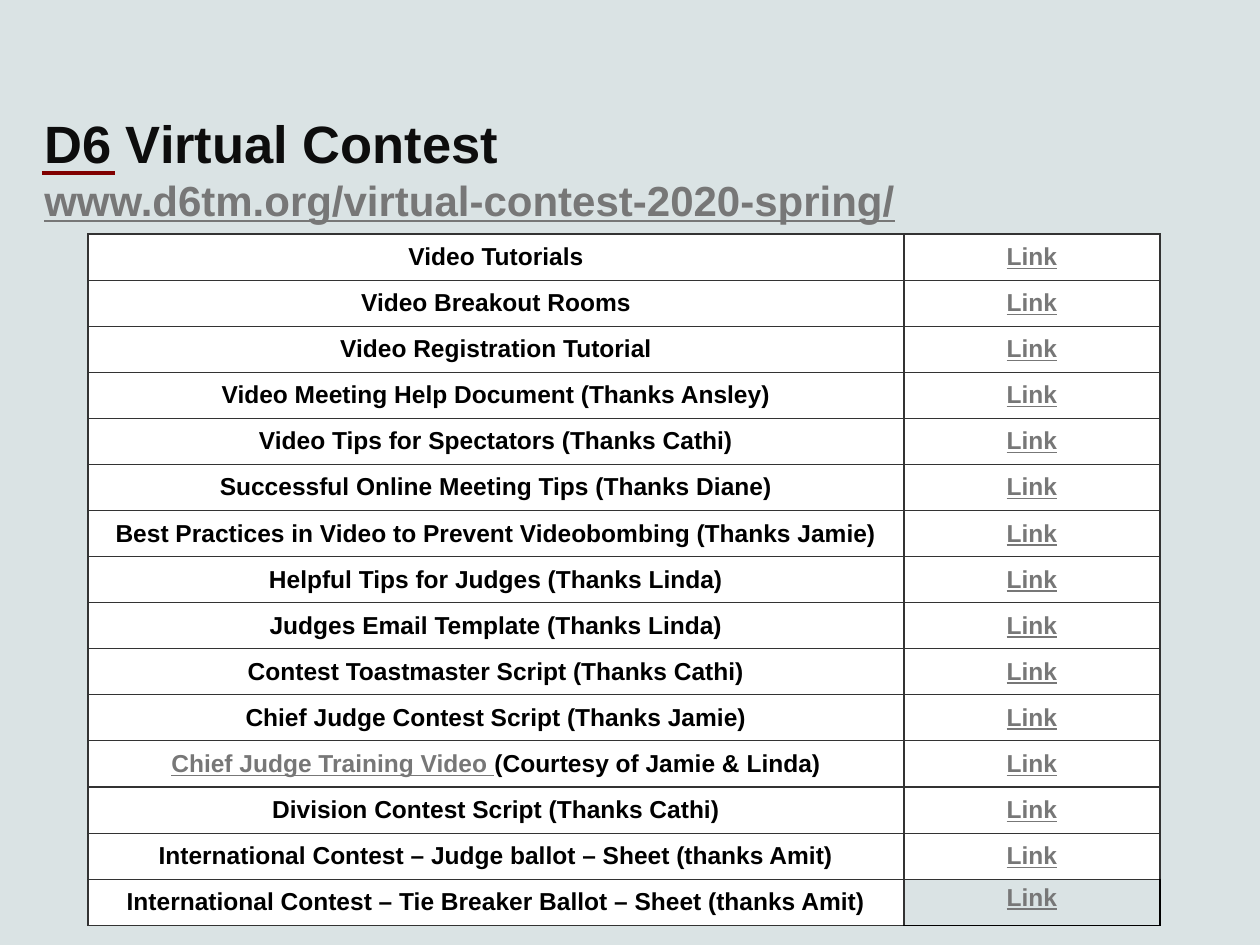
from lxml.etree import SubElement
from pptx import Presentation
from pptx.dml.color import RGBColor
from pptx.enum.shapes import MSO_CONNECTOR
from pptx.enum.text import MSO_ANCHOR as Anchor, PP_ALIGN as Align
from pptx.oxml.ns import qn
from pptx.util import Pt

SCALE = 914400 / 126
BLACK, GREY, WHITE, RULE = "000000", "777777", "FFFFFF", "333333"


def px(count):
    return round(count * SCALE)


def add_span(para, text, size, color, underline=False):
    span = para.add_run()
    span.text = text
    span.font.name = "Arial"
    span.font.size = Pt(size)
    span.font.bold = True
    span.font.underline = underline
    span.font.color.rgb = RGBColor.from_string(color)


deck = Presentation()
deck.slide_width, deck.slide_height = px(1260), px(945)
page = deck.slides.add_slide(deck.slide_layouts[6])
page.background.fill.solid()
page.background.fill.fore_color.rgb = RGBColor.from_string("DAE3E4")

accent = page.shapes.add_connector(
    MSO_CONNECTOR.STRAIGHT, px(42), px(173), px(115), px(173))
accent.line.color.rgb = RGBColor.from_string("800000")
accent.line.width = Pt(2.25)
SubElement(accent._element.spPr, qn("a:effectLst"))

title = page.shapes.add_textbox(px(32), px(105), px(1187), px(120))
title.text_frame.word_wrap = True
heading = title.text_frame.paragraphs[0]
add_span(heading, "D6 Virtual Contest", 30, "0D0D0D")
heading.add_line_break()
add_span(heading, "www.d6tm.org/virtual-contest-2020-spring/", 24, GREY, True)

resources = [
    "Video Tutorials",
    "Video Breakout Rooms",
    "Video Registration Tutorial",
    "Video Meeting Help Document (Thanks Ansley)",
    "Video Tips for Spectators (Thanks Cathi)",
    "Successful Online Meeting Tips (Thanks Diane)",
    "Best Practices in Video to Prevent Videobombing (Thanks Jamie)",
    "Helpful Tips for Judges (Thanks Linda)",
    "Judges Email Template (Thanks Linda)",
    "Contest Toastmaster Script (Thanks Cathi)",
    "Chief Judge Contest Script (Thanks Jamie)",
    "(Courtesy of Jamie & Linda)",
    "Division Contest Script (Thanks Cathi)",
    "International Contest – Judge ballot – Sheet (thanks Amit)",
    "International Contest – Tie Breaker Ballot – Sheet (thanks Amit)",
]
linked_prefixes = {11: "Chief Judge Training Video "}
last = len(resources) - 1

table = page.shapes.add_table(
    len(resources), 2, px(88), px(234), px(1072), px(692)).table
table.first_row = table.horz_banding = False
table.columns[0].width, table.columns[1].width = px(816), px(256)

for row, resource in enumerate(resources):
    for column in range(2):
        cell = table.cell(row, column)
        is_open = row == last and column == 1
        cell.margin_left = cell.margin_right = px(6)
        cell.margin_top = cell.margin_bottom = px(5 if is_open else 6)
        cell.vertical_anchor = Anchor.TOP if is_open else Anchor.MIDDLE
        properties = cell._tc.get_or_add_tcPr()
        for side in ("lnL", "lnR", "lnT", "lnB"):
            heavy = is_open and side in ("lnR", "lnB")
            border = SubElement(properties, qn(f"a:{side}"), w=str(Pt(1 if heavy else 0.75)))
            paint = SubElement(border, qn("a:solidFill"))
            SubElement(paint, qn("a:srgbClr"), val=BLACK if heavy else RULE)
        if is_open:
            cell.fill.background()
        else:
            cell.fill.solid()
            cell.fill.fore_color.rgb = RGBColor.from_string(WHITE)
        para = cell.text_frame.paragraphs[0]
        para.alignment = Align.CENTER
        if column == 1:
            add_span(para, "Link", 14, GREY, True)
        else:
            if row in linked_prefixes:
                add_span(para, linked_prefixes[row], 14, GREY, True)
            add_span(para, resource, 14, BLACK)

deck.save("out.pptx")
